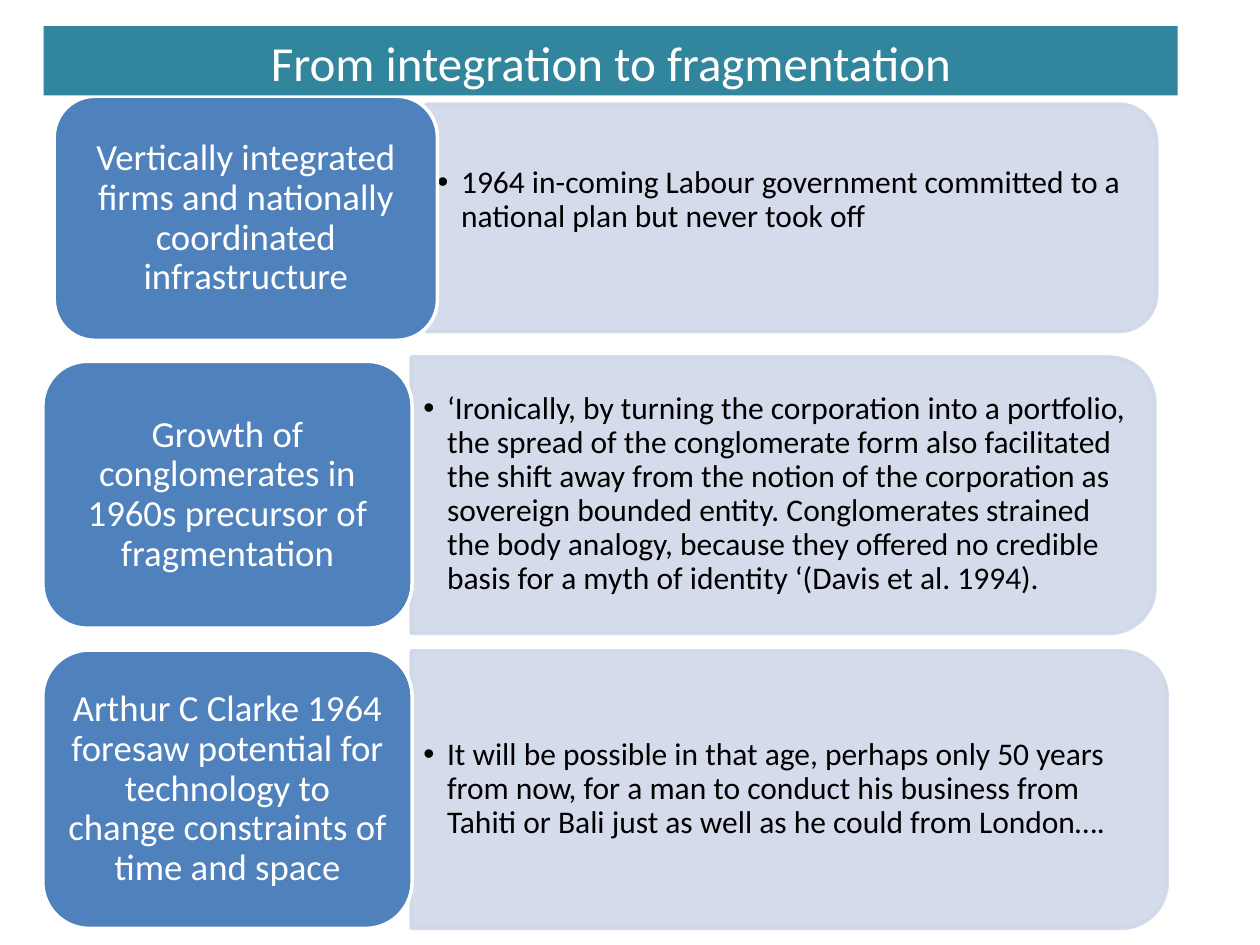
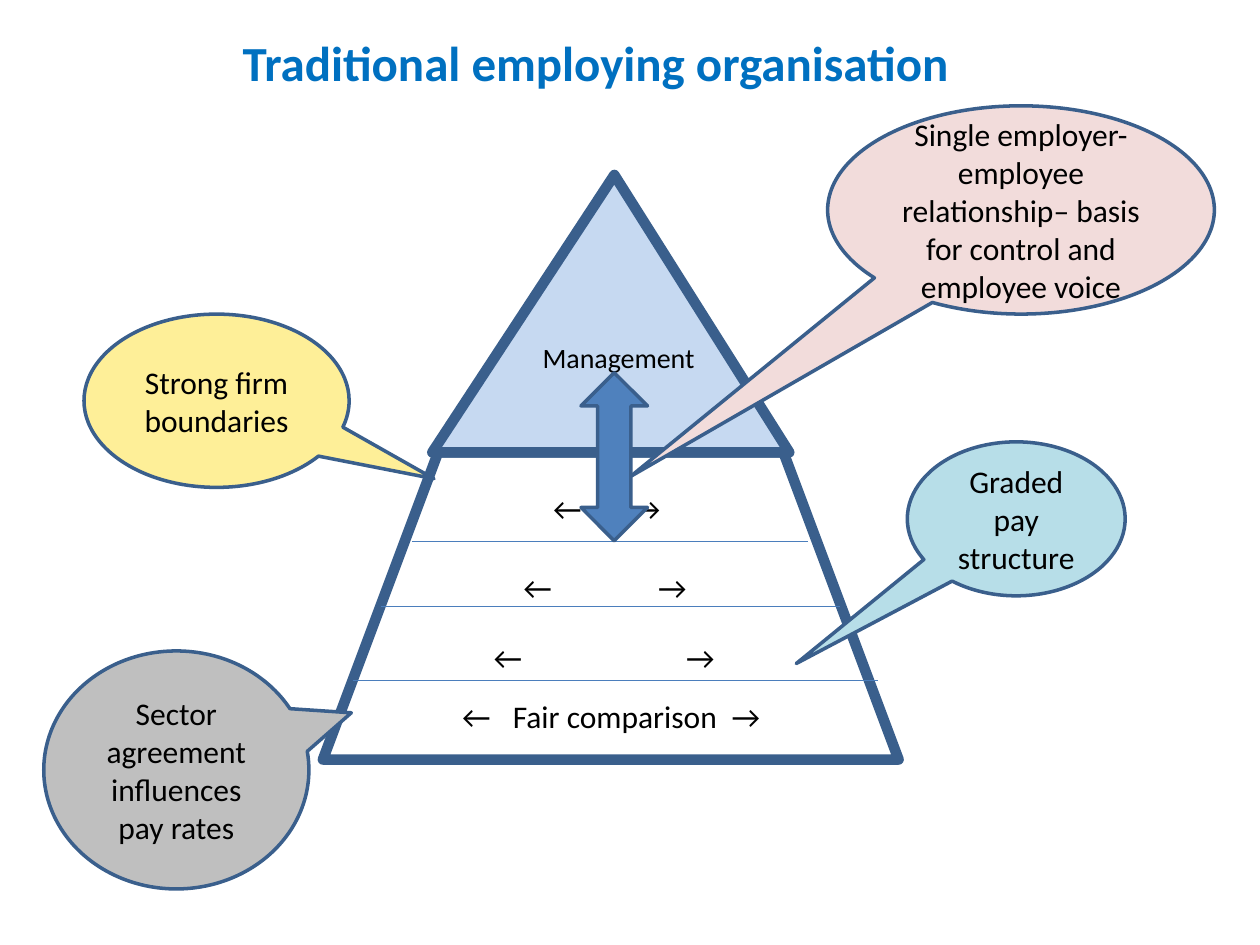
from pptx import Presentation
from pptx.dml.color import RGBColor as RGB
from pptx.enum.shapes import MSO_CONNECTOR as Link, MSO_SHAPE as Form
from pptx.enum.text import MSO_ANCHOR as Anchor, PP_ALIGN as Align
from pptx.oxml.ns import qn
from pptx.util import Pt
from lxml.etree import SubElement

WHITE = RGB(0xFF, 0xFF, 0xFF)
BLACK = RGB(0, 0, 0)
TEAL = RGB(0x31, 0x85, 0x9C)
BLUE = RGB(0x4F, 0x81, 0xBD)
PALE = RGB(0xD0, 0xD8, 0xE8)
NAVY = RGB(0x3A, 0x5F, 0x8C)
RULE = RGB(0x4B, 0x7E, 0xBC)
SKY = RGB(0xC6, 0xD9, 0xF1)
HEAD = RGB(0x00, 0x70, 0xC0)
AQUA = RGB(0xB7, 0xDE, 0xE8)
YELLOW = RGB(0xFE, 0xEF, 0x98)
PINK = RGB(0xF2, 0xDC, 0xDB)
GREY = RGB(0xBF, 0xBF, 0xBF)

TITLE = dict(size=Pt(28), name="Calibri")
BODY = dict(size=Pt(18), name="Calibri")
LABEL = dict(size=Pt(21), name="Calibri")
SMALL = dict(size=Pt(16), name="Calibri")
MID = dict(vertical_anchor=Anchor.MIDDLE)
TIGHT = dict(MID, margin_left=Pt(6.5), margin_right=Pt(6.5),
             margin_top=Pt(3), margin_bottom=Pt(3))
CENTER = dict(alignment=Align.CENTER)
DENSE = dict(line_spacing=0.9)


def style(item, values):
    for key, value in values.items():
        setattr(item, key, value)


class Deck:
    """Holds the file, the current slide and the shared style."""

    def __init__(self):
        self.file = Presentation()
        self.file.slide_width, self.file.slide_height = Pt(720), Pt(540)
        self.slide = None

    def page(self):
        self.slide = self.file.slides.add_slide(self.file.slide_layouts[6])

    def label(self, shape, text, font, ink=BLACK, frame=None, para=None):
        body = shape.text_frame
        style(body, dict(word_wrap=True, vertical_anchor=Anchor.TOP) | (frame or {}))
        line = body.paragraphs[0]
        style(line, para or {})
        run = line.add_run()
        run.text = text
        style(run.font, font)
        run.font.color.rgb = ink
        return line

    def text(self, box, text, font, **look):
        shape = self.slide.shapes.add_textbox(*map(Pt, box))
        return self.label(shape, text, font, **look)

    def shape(self, form, box, fill=None, line=None, width=2, turn=0, adjust=()):
        shape = self.slide.shapes.add_shape(form, *map(Pt, box))
        shape.shadow.inherit = False
        shape.rotation = turn
        for i, value in enumerate(adjust):
            shape.adjustments[i] = value
        if fill is None:
            shape.fill.background()
        else:
            shape.fill.solid()
            shape.fill.fore_color.rgb = fill
        if line is None:
            shape.line.fill.background()
        else:
            shape.line.color.rgb = line
            shape.line.width = Pt(width)
        return shape

    def panel(self, x, y, w, h):
        """Draw a panel rounded on its right side, given its visible frame."""
        box = (x + (w - h) / 2, y + (h - w) / 2, h, w)
        shape = self.shape(Form.ROUND_2_SAME_RECTANGLE, box, PALE, PALE, turn=90)
        for color in shape._element.spPr.iter(qn("a:srgbClr")):
            SubElement(color, qn("a:alpha"), val="90000")

    def bullet(self, box, text):
        line = self.text(box, text, BODY, frame=TIGHT, para=DENSE)
        props = line._p.get_or_add_pPr()
        props.set("marL", str(Pt(13.5)))
        props.set("indent", str(-Pt(13.5)))
        SubElement(props, qn("a:buFont"), typeface="Arial")
        SubElement(props, qn("a:buChar"), char="•")

    def tag(self, box, text):
        shape = self.shape(Form.ROUNDED_RECTANGLE, box, BLUE, WHITE)
        self.label(shape, text, LABEL, WHITE, TIGHT, CENTER | DENSE)

    def tabbed(self, box, text, stops):
        line = self.text(box, text, BODY)
        tabs = SubElement(line._p.get_or_add_pPr(), qn("a:tabLst"))
        for stop in stops:
            SubElement(tabs, qn("a:tab"), pos=str(Pt(stop)), algn="l")

    def rule(self, left, right, y):
        line = self.slide.shapes.add_connector(
            Link.STRAIGHT, Pt(left), Pt(y), Pt(right), Pt(y))
        line.line.color.rgb = RULE
        line.line.width = Pt(0.75)
        SubElement(line._element.spPr, qn("a:effectLst"))

    def callout(self, box, fill, tip, text):
        shape = self.shape(Form.OVAL_CALLOUT, box, fill, NAVY, adjust=tip)
        self.label(shape, text, BODY, frame=MID, para=CENTER)


def shift(deck):
    deck.page()
    rows = [
        ((243.5, 59.5, 417.5, 130), (243.5, 56, 411, 117), (31, 55, 219, 139.5),
         "Vertically integrated firms and nationally coordinated infrastructure",
         "1964 in-coming Labour government committed to a national plan but never "
         "took off"),
        ((235, 204, 425, 158), (235.5, 211.5, 417, 142), (24.5, 206.5, 211, 152.5),
         "Growth of conglomerates in 1960s precursor of fragmentation",
         "‘Ironically, by turning the corporation into a portfolio, the spread of the "
         "conglomerate form also facilitated the shift away from the notion of the "
         "corporation as sovereign bounded entity. Conglomerates strained the body "
         "analogy, because they offered no credible basis for a myth of identity "
         "‘(Davis et al. 1994)."),
        ((235, 372, 432, 158.5), (235.5, 379.5, 424, 143), (24.5, 371.5, 211, 159),
         "Arthur C Clarke 1964 foresaw potential for technology to change "
         "constraints of time and space",
         "It will be possible in that age, perhaps only 50 years from now, for a man "
         "to conduct his business from Tahiti or Bali just as well as he could from "
         "London…."),
    ]
    for panel, note, tag, label, text in rows:
        deck.panel(*panel)
        deck.bullet(note, text)
        deck.tag(tag, label)
    band = deck.shape(Form.RECTANGLE, (25, 15, 648, 39.5), TEAL)
    deck.label(band, "From integration to fragmentation", TITLE, WHITE, para=CENTER)


def pyramid(deck):
    deck.page()
    deck.shape(Form.ISOSCELES_TRIANGLE, (247, 100, 204, 158.5), SKY, NAVY, 6,
               adjust=[0.51])
    deck.shape(Form.FLOWCHART_MANUAL_OPERATION, (184.5, 258.5, 329, 175.5),
               line=NAVY, width=6, turn=180)
    for left, right, y in [(217.5, 480, 346.5), (201.5, 502, 389), (235.5, 462, 309.5)]:
        deck.rule(left, right, y)
    deck.text((303, 191, 108, 26.5), "Management", SMALL)
    arrows = [
        (309, 276, "←\t→", [45]),
        (292, 321, "←\t→", [77]),
        (275, 361, "←\t→", [110]),
        (257, 394.5, "←\tFair comparison\t→", [29, 154]),
    ]
    for left, top, text, stops in arrows:
        deck.tabbed((left, top, stops[-1] + 40, 29), text, stops)
    deck.text((127.5, 15, 425.5, 41), "Traditional employing organisation",
              TITLE | dict(bold=True), ink=HEAD, para=CENTER)
    deck.callout((518.5, 252.5, 124.5, 88), AQUA, (-1.01, 0.94),
                 "Graded pay structure")
    deck.callout((48, 179.5, 151.5, 99), YELLOW, (0.82, 0.45),
                 "Strong firm boundaries")
    deck.shape(Form.UP_DOWN_ARROW, (332, 213, 38, 96), BLUE, NAVY)
    deck.callout((473, 60.5, 221, 119), PINK, (-1.01, 1.28),
                 "Single employer-employee relationship– basis for control and "
                 "employee voice")
    deck.callout((25, 372, 151.5, 136), GREY, (0.66, -0.24),
                 "Sector agreement influences pay rates")


def main():
    deck = Deck()
    shift(deck)
    pyramid(deck)
    deck.file.save("out.pptx")


if __name__ == "__main__":
    main()
